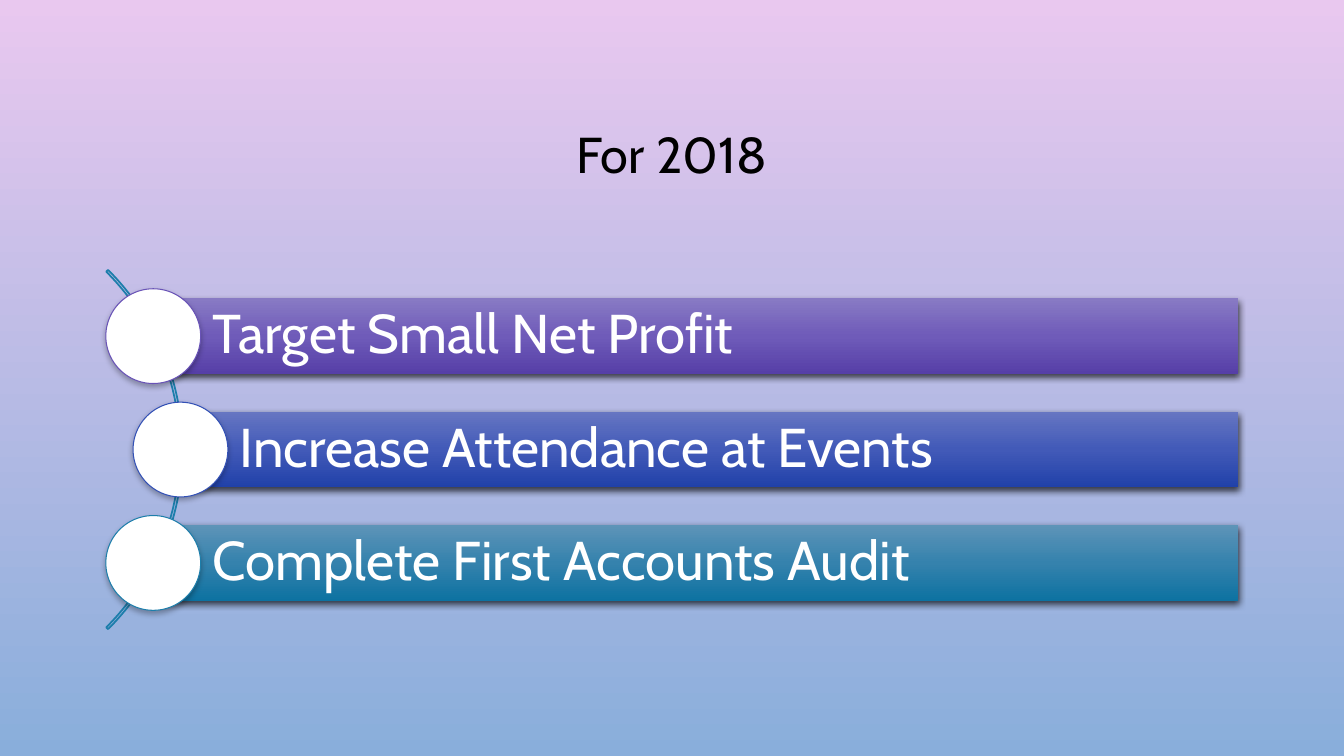
import copy

import pptx
import pptx.dml.color
import pptx.enum.shapes
import pptx.enum.text
import pptx.oxml
import pptx.oxml.ns
import pptx.util

Inches = pptx.util.Inches
Pt = pptx.util.Pt
RGBColor = pptx.dml.color.RGBColor
Shapes = pptx.enum.shapes.MSO_SHAPE
Align = pptx.enum.text.PP_ALIGN

BLACK = RGBColor(0x00, 0x00, 0x00)
WHITE = RGBColor(0xFF, 0xFF, 0xFF)
TEAL = RGBColor(0x1D, 0x7E, 0xAB)
PURPLE = RGBColor(0x69, 0x53, 0xB7)
BLUE = RGBColor(0x33, 0x51, 0xB6)
BACKDROP = (RGBColor(0xE9, 0xC8, 0xEF), RGBColor(0x89, 0xAE, 0xDB))
PURPLES = (RGBColor(0x88, 0x7A, 0xC4), RGBColor(0x6F, 0x5B, 0xB9), RGBColor(0x56, 0x3F, 0xA7))
BLUES = (RGBColor(0x66, 0x76, 0xC2), RGBColor(0x42, 0x5A, 0xB8), RGBColor(0x21, 0x41, 0xA9))
TEALS = (RGBColor(0x5D, 0x94, 0xB8), RGBColor(0x35, 0x82, 0xAD), RGBColor(0x0D, 0x72, 0xA1))

# Goal, left edge of its bar, bar gradient, circle outline
GOALS = (
    ("Target Small Net Profit", 1.52, PURPLES, PURPLE),
    ("Increase Attendance at Events", 1.79, BLUES, BLUE),
    ("Complete First Accounts Audit", 1.52, TEALS, TEAL),
)
BAR_TOP, BAR_HEIGHT, BAR_RIGHT = 2.96, 0.75, 12.28
BAR_STEP = 1.5 * BAR_HEIGHT
CIRCLE_SIZE = 0.94


def colour_stops(fill, colours):
    """Space the colours evenly from top to bottom."""
    fill.gradient_angle = 270
    for index, (stop, colour) in enumerate(zip(fill.gradient_stops, colours)):
        stop.color.rgb = colour
        stop.position = index / (len(colours) - 1)


class GoalSlide:
    font = "Cabin"

    def __init__(self, deck):
        self.page = deck.slides.add_slide(deck.slide_layouts[6])
        fill = self.page.background.fill
        fill.gradient()
        colour_stops(fill, BACKDROP)

    def shape(self, kind, left, top, width, height):
        shape = self.page.shapes.add_shape(
            kind, Inches(left), Inches(top), Inches(width), Inches(height))
        shape.shadow.inherit = False
        return shape

    def drop_shadow(self, shape, opacity, blur):
        effects = shape._element.spPr.find(pptx.oxml.ns.qn("a:effectLst"))
        effects.append(pptx.oxml.parse_xml(
            f'<a:outerShdw {pptx.oxml.ns.nsdecls("a")} blurRad="{Pt(blur)}" '
            f'dist="{Pt(2)}" dir="5400000" rotWithShape="0"><a:srgbClr val="{BLACK}">'
            f'<a:alpha val="{opacity * 1000}"/></a:srgbClr></a:outerShdw>'))

    def add_text(self, shape, text, size, colour, align):
        frame = shape.text_frame
        frame.word_wrap = True
        frame.vertical_anchor = pptx.enum.text.MSO_ANCHOR.MIDDLE
        para = frame.paragraphs[0]
        para.alignment = align
        para.line_spacing = 0.9
        span = para.add_run()
        span.text = text
        span.font.name = self.font
        span.font.size = Pt(size)
        span.font.color.rgb = colour

    def title(self, text):
        box = self.page.shapes.add_textbox(Inches(1), Inches(0.68), Inches(11.33), Inches(1.75))
        self.add_text(box, text, 36, BLACK, Align.CENTER)

    def arc(self):
        arc = self.shape(Shapes.BLOCK_ARC, -3.23, 1.94, 5.04, 5.04)
        for index, value in enumerate((189, 27, 0.005)):
            arc.adjustments[index] = value
        arc.fill.background()
        arc.line.color.rgb = TEAL
        arc.line.width = Pt(1.25)

    def bar(self, text, left, top, colours):
        bar = self.shape(Shapes.RECTANGLE, left, top, BAR_RIGHT - left, BAR_HEIGHT)
        bar.fill.gradient()
        stops = bar._element.spPr.find(".//" + pptx.oxml.ns.qn("a:gsLst"))
        stops.insert(1, copy.deepcopy(stops[0]))
        colour_stops(bar.fill, colours)
        bar.line.fill.background()
        self.drop_shadow(bar, 69, 5)
        frame = bar.text_frame
        frame.margin_left = Inches(0.59)
        frame.margin_top = frame.margin_right = frame.margin_bottom = Inches(0.11)
        self.add_text(bar, text, 39, WHITE, Align.LEFT)

    def circle(self, centre_x, centre_y, outline):
        radius = CIRCLE_SIZE / 2
        circle = self.shape(Shapes.OVAL, centre_x - radius, centre_y - radius,
                            CIRCLE_SIZE, CIRCLE_SIZE)
        circle.fill.solid()
        circle.fill.fore_color.rgb = WHITE
        circle.line.color.rgb = outline
        circle.line.width = Pt(0.75)
        self.drop_shadow(circle, 28, 4)


def main():
    deck = pptx.Presentation()
    deck.slide_width, deck.slide_height = Inches(13.33), Inches(7.5)
    slide = GoalSlide(deck)
    slide.title("For 2018")
    slide.arc()
    for index, (goal, left, colours, outline) in enumerate(GOALS):
        top = BAR_TOP + index * BAR_STEP
        slide.bar(goal, left, top, colours)
        slide.circle(left, top + BAR_HEIGHT / 2, outline)
    deck.save("out.pptx")


if __name__ == "__main__":
    main()
